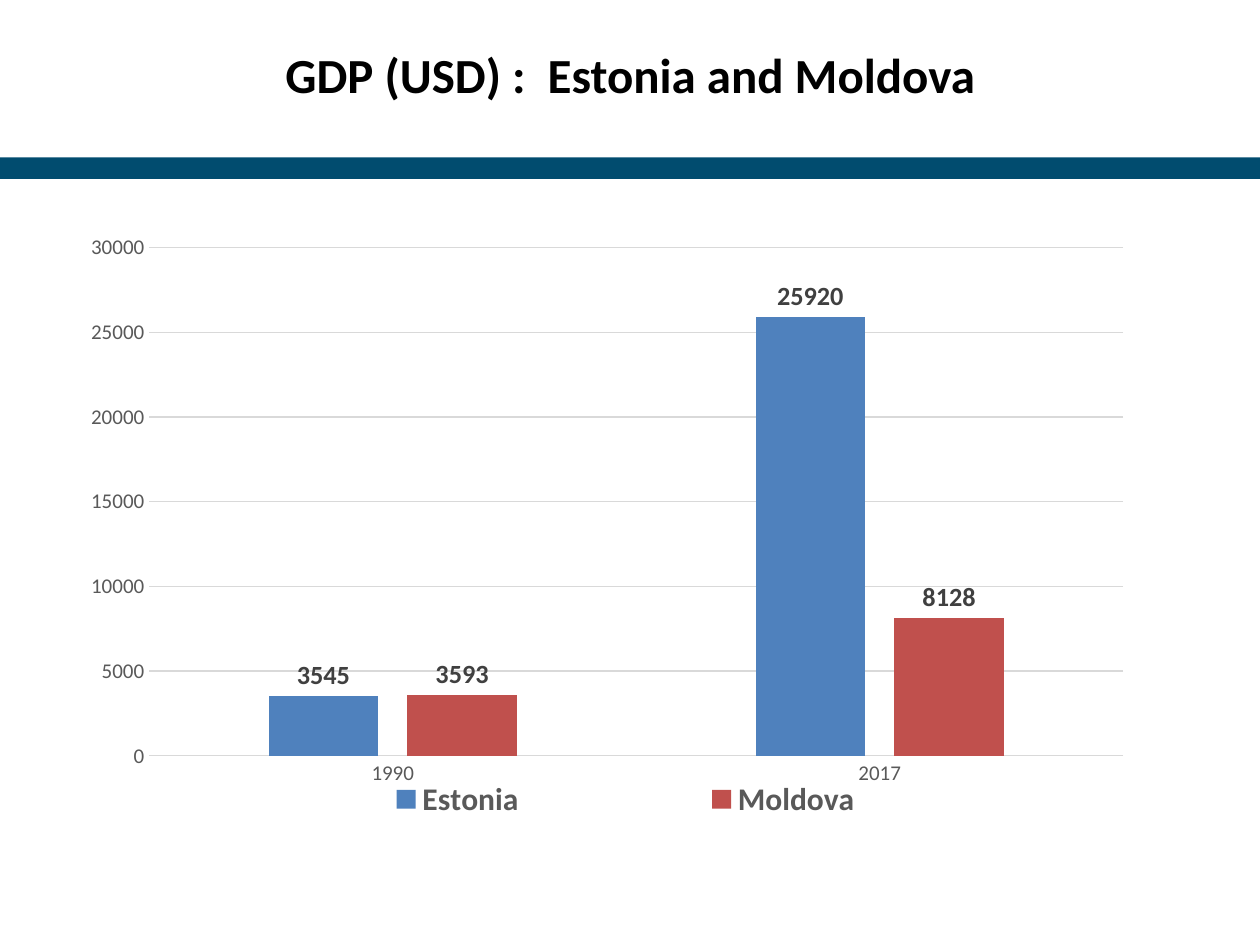
from lxml import etree
from pptx import Presentation
from pptx.chart.data import CategoryChartData
from pptx.dml.color import RGBColor
from pptx.enum import chart as ch, shapes, text
from pptx.oxml.ns import qn
from pptx.util import Inches, Pt

FONT = "Calibri"
GRID, AXIS_TEXT, LABEL_TEXT = "D9D9D9", "595959", "404040"
YEARS = ["1990", "2017"]
GDP = [("Estonia", (3545, 25920), "4F81BD"),
       ("Moldova", (3593, 8128), "C0504D")]


def rgb(value):
    return RGBColor.from_string(value)


def style_font(font, size, color, bold=False):
    font.name, font.size, font.bold = FONT, Pt(size), bold
    font.color.rgb = rgb(color)


def style_line(line):
    line.color.rgb = rgb(GRID)
    line.width = Pt(0.75)


def set_layout(parent, index, x, y, w, h, inner=False):
    """Place a chart part by fractions of the chart's width and height."""
    for old in parent.findall(qn("c:layout")):
        parent.remove(old)
    layout = etree.Element(qn("c:layout"))
    parent.insert(index, layout)
    manual = etree.SubElement(layout, qn("c:manualLayout"))
    items = [("layoutTarget", "inner")] if inner else []
    items += [("xMode", "edge"), ("yMode", "edge"),
              ("x", x), ("y", y), ("w", w), ("h", h)]
    for tag, value in items:
        etree.SubElement(manual, qn("c:" + tag)).set("val", str(value))


def add_title(s, title):
    sp = s.shapes.title
    sp.left, sp.top = Inches(0.25), Inches(0)
    sp.width, sp.height = Inches(9.5), Inches(1.17)
    tf = sp.text_frame
    tf.text = title
    tf.vertical_anchor = text.MSO_ANCHOR.MIDDLE
    p = tf.paragraphs[0]
    p.alignment = text.PP_ALIGN.CENTER
    style_font(p.runs[0].font, 28, "000000", True)


def add_band(s):
    sp = s.shapes.add_shape(shapes.MSO_SHAPE.RECTANGLE, Inches(0), Inches(1.25),
                            Inches(10), Inches(0.17))
    sp.shadow.inherit = False
    sp.fill.solid()
    sp.fill.fore_color.rgb = rgb("014C6F")
    sp.line.fill.background()


def format_axes(chart):
    for axis in (chart.category_axis, chart.value_axis):
        axis.major_tick_mark = axis.minor_tick_mark = ch.XL_TICK_MARK.NONE
        style_font(axis.tick_labels.font, 12, AXIS_TEXT)
    style_line(chart.category_axis.format.line)
    values = chart.value_axis
    values.minimum_scale, values.maximum_scale, values.major_unit = 0, 30000, 5000
    values.format.line.fill.background()
    values.tick_labels.number_format = "0"
    values.tick_labels.number_format_is_linked = False
    style_line(values.major_gridlines.format.line)


def format_series(series, color):
    series.format.fill.solid()
    series.format.fill.fore_color.rgb = rgb(color)
    labels = series.data_labels
    labels.show_value = True
    labels.position = ch.XL_LABEL_POSITION.OUTSIDE_END
    labels.number_format, labels.number_format_is_linked = "0", False
    style_font(labels.font, 15, LABEL_TEXT, True)


def add_gdp_chart(s):
    data = CategoryChartData(number_format="0")
    data.categories = YEARS
    for name, values, _ in GDP:
        data.add_series(name, values)
    chart = s.shapes.add_chart(ch.XL_CHART_TYPE.COLUMN_CLUSTERED, Inches(0.42),
                               Inches(1.67), Inches(8.5), Inches(4.92), data).chart
    style_font(chart.font, 10, "000000")
    chart.has_title = False
    format_axes(chart)
    plot = chart.plots[0]
    plot.gap_width, plot.overlap, plot.vary_by_categories = 219, -27, False
    for series, (_, _, color) in zip(plot.series, GDP):
        format_series(series, color)
    chart.has_legend = True
    legend = chart.legend
    legend.position = ch.XL_LEGEND_POSITION.BOTTOM
    legend.include_in_layout = False
    style_font(legend.font, 18, AXIS_TEXT, True)
    plot_area = chart.element.find(".//" + qn("c:plotArea"))
    set_layout(plot_area, 0, 0.09, 0.06, 0.91, 0.82, inner=True)
    set_layout(chart.element.find(".//" + qn("c:legend")), 1, 0.15, 0.91, 0.77, 0.08)


def main():
    prs = Presentation()
    prs.slide_width, prs.slide_height = Inches(10), Inches(7.5)
    s = prs.slides.add_slide(prs.slide_layouts[5])
    add_band(s)
    add_title(s, "GDP (USD) :  Estonia and Moldova")
    add_gdp_chart(s)
    prs.save("out.pptx")


if __name__ == "__main__":
    main()
